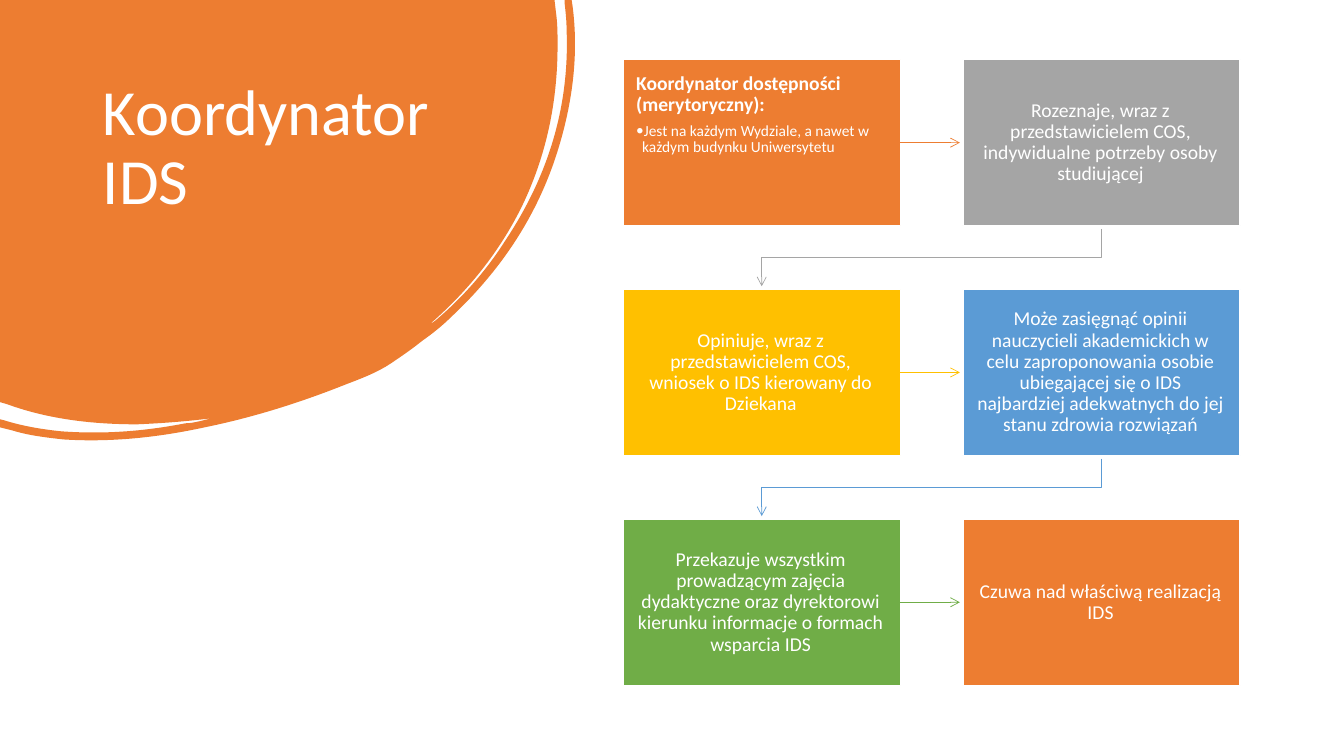
"""Build a slide with the six-step role of the IDS coordinator."""
from dataclasses import dataclass
from lxml.etree import SubElement
from pptx import Presentation
from pptx.dml.color import RGBColor
from pptx.enum.shapes import MSO_CONNECTOR, MSO_SHAPE
from pptx.enum.text import MSO_ANCHOR, PP_ALIGN
from pptx.oxml.ns import qn
from pptx.util import Inches, Pt

TITLE = "Koordynator IDS"
LEAD = "Koordynator dostępności (merytoryczny):"
LEAD_DETAIL = "Jest na każdym Wydziale, a nawet w każdym budynku Uniwersytetu"
STEPS = [
    ("orange", LEAD),
    ("gray", "Rozeznaje, wraz z przedstawicielem COS, indywidualne potrzeby osoby studiującej"),
    ("gold", "Opiniuje, wraz z przedstawicielem COS, wniosek o IDS kierowany do Dziekana"),
    ("blue", "Może zasięgnąć opinii nauczycieli akademickich w celu zaproponowania osobie "
             "ubiegającej się o IDS najbardziej adekwatnych do jej stanu zdrowia rozwiązań"),
    ("green", "Przekazuje wszystkim prowadzącym zajęcia dydaktyczne oraz dyrektorowi kierunku "
              "informacje o formach wsparcia IDS"),
    ("orange", "Czuwa nad właściwą realizacją IDS"),
]
# Pairs are line ends; sextuples are two curve handles and an end.
BLOB = [
    (0, 0), (5.5, 0), (5.52, 0.17),
    (5.53, 0.26, 5.53, 0.36, 5.53, 0.45), (5.53, 1.01, 5.42, 1.54, 5.18, 2.04),
    (4.96, 2.49, 4.65, 2.88, 4.27, 3.21), (4.29, 3.21, 4.3, 3.19, 4.32, 3.18),
    (4.59, 2.95, 4.82, 2.69, 5.01, 2.39), (5.43, 1.76, 5.65, 1.07, 5.62, 0.3),
    (5.62, 0.21, 5.61, 0.12, 5.6, 0.03), (5.6, 0), (5.67, 0), (5.68, 0.07),
    (5.74, 0.54, 5.68, 1.02, 5.53, 1.5), (5.33, 2.14, 4.97, 2.68, 4.48, 3.14),
    (4.39, 3.23, 4.29, 3.31, 4.19, 3.38), (4.09, 3.46, 3.99, 3.53, 3.87, 3.61),
    (3.75, 3.69, 3.6, 3.75, 3.44, 3.81), (2.99, 3.99, 2.52, 4.14, 2.03, 4.24),
    (1.57, 4.34, 1.1, 4.39, 0.63, 4.36), (0.45, 4.34, 0.28, 4.32, 0.12, 4.27),
    (0, 4.24), (0, 4.16), (0.04, 4.17),
    (0.23, 4.23, 0.42, 4.26, 0.61, 4.28), (1.03, 4.31, 1.43, 4.28, 1.84, 4.2),
    (1.89, 4.2, 1.93, 4.19, 1.98, 4.18), (2.02, 4.17, 2.06, 4.16, 2.1, 4.15),
    (1.86, 4.18, 1.61, 4.2, 1.36, 4.21), (0.92, 4.21, 0.48, 4.16, 0.07, 4.01),
    (0, 3.99),
]


@dataclass(frozen=True)
class Theme:
    font: str = "Calibri"
    white: str = "FFFFFF"
    orange: str = "ED7D31"
    gray: str = "A5A5A5"
    gold: str = "FFC000"
    blue: str = "5B9BD5"
    green: str = "70AD47"
    title_size: float = 46
    step_size: float = 14
    detail_size: float = 11


THEME = Theme()
COLUMNS = 2
LEFT, TOP = 6.18, 0.59
BOX_WIDTH, BOX_HEIGHT = 2.75, 1.65
COLUMN_PITCH, ROW_PITCH = 3.37, 2.28
ARROW_GAP = 0.03
BLOB_UNITS = 100


def color(name):
    return RGBColor.from_string(getattr(THEME, name))


def write(para, text, size, bold=False, align=PP_ALIGN.LEFT, after=0.0, bullet_indent=0.0):
    para.alignment = align
    para.line_spacing = 0.9
    para.space_before, para.space_after = Pt(0), Pt(after)
    span = para.add_run()
    span.text = text
    span.font.name, span.font.size, span.font.bold = THEME.font, Pt(size), bold
    span.font.color.rgb = color("white")
    if bullet_indent:
        para.level = 1
        properties = para._p.get_or_add_pPr()
        properties.set("marL", str(Inches(bullet_indent)))
        properties.set("indent", str(-Inches(bullet_indent)))
        SubElement(properties, qn("a:buFont")).set("typeface", THEME.font)
        SubElement(properties, qn("a:buChar")).set("char", "•")


def add_blob(page):
    segments = [[round(value * BLOB_UNITS) for value in segment] for segment in BLOB]
    first, *rest = segments
    builder = page.shapes.build_freeform(*first, scale=Inches(1) / BLOB_UNITS)
    builder.add_line_segments([segment[-2:] for segment in rest], close=True)
    blob = builder.convert_to_shape()
    blob.shadow.inherit = False
    blob.fill.solid()
    blob.fill.fore_color.rgb = color("orange")
    blob.line.fill.background()
    for edge, segment in zip(list(blob._element.iter(qn("a:lnTo"))), rest):
        if len(segment) == 6:
            curve = edge.makeelement(qn("a:cubicBezTo"))
            for x, y in zip(segment[::2], segment[1::2]):
                SubElement(curve, qn("a:pt"), x=str(x), y=str(y))
            edge.getparent().replace(edge, curve)


def add_title(page):
    title = page.shapes.title
    title.left, title.top, title.width, title.height = map(Inches, (0.92, 0.74, 3.52, 2.22))
    title.text_frame.word_wrap = True
    title.text_frame.vertical_anchor = MSO_ANCHOR.TOP
    write(title.text_frame.paragraphs[0], TITLE, THEME.title_size)
    title._element.getparent().append(title._element)


def add_step(page, index, fill, text):
    row, column = divmod(index, COLUMNS)
    box = page.shapes.add_shape(
        MSO_SHAPE.RECTANGLE, Inches(LEFT + column * COLUMN_PITCH),
        Inches(TOP + row * ROW_PITCH), Inches(BOX_WIDTH), Inches(BOX_HEIGHT))
    box.shadow.inherit = False
    box.fill.solid()
    box.fill.fore_color.rgb = color(fill)
    box.line.color.rgb, box.line.width = color("white"), Pt(1)
    frame = box.text_frame
    frame.word_wrap = True
    frame.margin_left, frame.margin_right = Inches(0.13), Inches(0.15)
    frame.margin_top = frame.margin_bottom = Inches(0.14)
    is_lead = text == LEAD
    frame.vertical_anchor = MSO_ANCHOR.TOP if is_lead else MSO_ANCHOR.MIDDLE
    write(frame.paragraphs[0], text, THEME.step_size, bold=is_lead, after=5,
          align=PP_ALIGN.LEFT if is_lead else PP_ALIGN.CENTER)
    if is_lead:
        write(frame.add_paragraph(), LEAD_DETAIL, THEME.detail_size, after=2, bullet_indent=0.06)
    return box


def link(page, source, target, tint):
    gap = Inches(ARROW_GAP)
    if source.top == target.top:
        middle = source.top + source.height // 2
        arrow = page.shapes.add_connector(
            MSO_CONNECTOR.STRAIGHT, source.left + source.width, middle, target.left - gap, middle)
        arrow.begin_connect(source, 3)
    else:
        start_y = source.top + source.height + gap
        drop = target.top - gap - start_y
        run = source.left - target.left
        left = target.left + target.width // 2 + (run - drop) // 2
        top = start_y + (drop - run) // 2
        arrow = page.shapes.add_connector(MSO_CONNECTOR.ELBOW, left, top, left + drop, top + run)
        arrow._element.spPr.find(qn("a:xfrm")).set("rot", str(90 * 60000))
    arrow.line.color.rgb, arrow.line.width = color(tint), Pt(0.5)
    SubElement(arrow.line._get_or_add_ln(), qn("a:tailEnd")).set("type", "arrow")
    SubElement(arrow._element.spPr, qn("a:effectLst"))


def main():
    deck = Presentation()
    deck.slide_width, deck.slide_height = Inches(13.33), Inches(7.5)
    page = deck.slides.add_slide(deck.slide_layouts[5])
    add_blob(page)
    add_title(page)
    boxes = [add_step(page, index, *step) for index, step in enumerate(STEPS)]
    for source, target, (tint, _) in zip(boxes, boxes[1:], STEPS):
        link(page, source, target, tint)
    deck.save("out.pptx")


if __name__ == "__main__":
    main()
